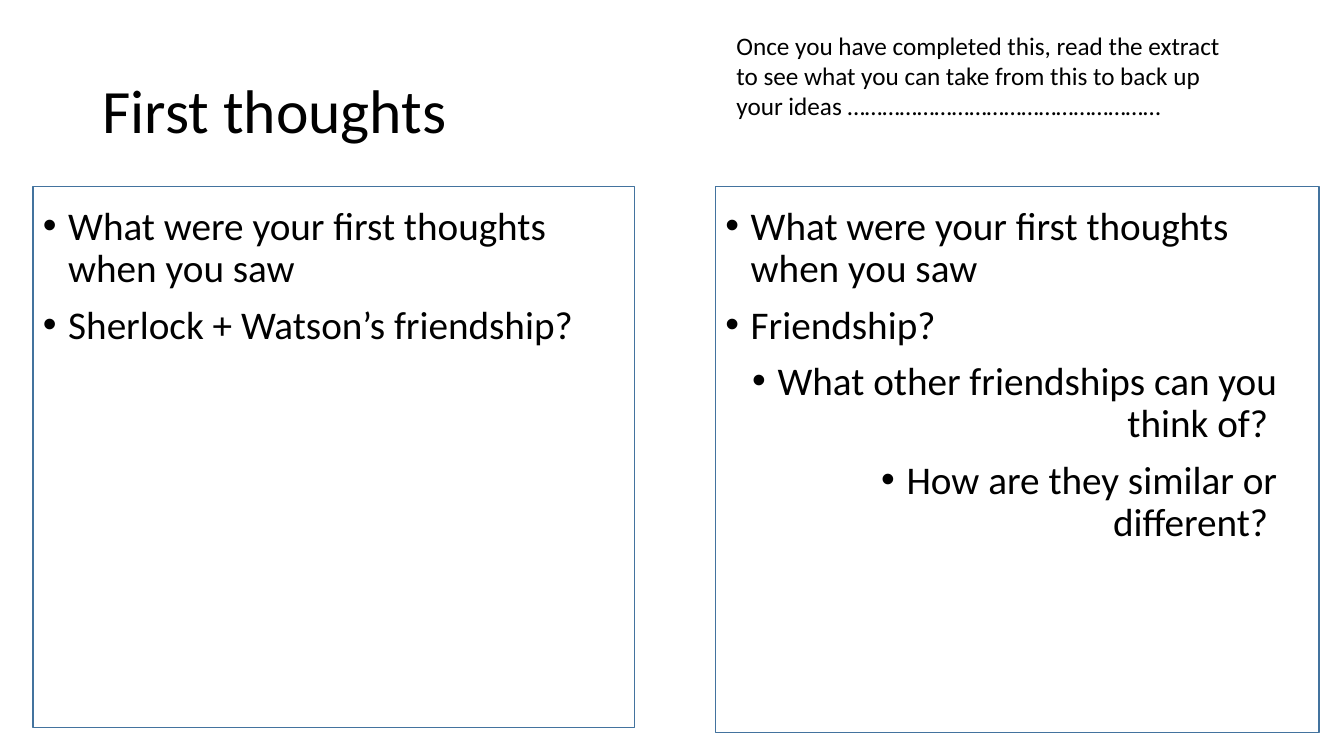
import pptx
import pptx.dml.color
import pptx.enum.shapes
import pptx.enum.text
import pptx.oxml.ns
import pptx.util

BLACK = pptx.dml.color.RGBColor(0x00, 0x00, 0x00)
FRAME_BLUE = pptx.dml.color.RGBColor(0x43, 0x73, 0x9E)
LEFT = pptx.enum.text.PP_ALIGN.LEFT
RIGHT = pptx.enum.text.PP_ALIGN.RIGHT
TOP = pptx.enum.text.MSO_ANCHOR.TOP
MIDDLE = pptx.enum.text.MSO_ANCHOR.MIDDLE

FIRST_QUESTION = "What were your first thoughts when you saw"
SHERLOCK_QUESTIONS = [
    (FIRST_QUESTION, LEFT),
    ("Sherlock + Watson’s friendship?", LEFT),
]
FRIENDSHIP_QUESTIONS = [
    (FIRST_QUESTION, LEFT),
    ("Friendship?", LEFT),
    ("What other friendships can you think of? ", RIGHT),
    ("How are they similar or different? ", RIGHT),
]
INSTRUCTION = (
    "Once you have completed this, read the extract to see what you can take "
    "from this to back up your ideas " + "…" * 18
)


def add_bullet(paragraph):
    properties = paragraph._p.get_or_add_pPr()
    indent = pptx.util.Cm(0.64)
    properties.set("marL", str(indent))
    properties.set("indent", str(-indent))
    for tag, name, value in (("a:buFont", "typeface", "Arial"), ("a:buChar", "char", "•")):
        properties.append(
            properties.makeelement(pptx.oxml.ns.qn(tag), {name: value})
        )


def write(paragraph, text, size, align=LEFT, line_spacing=1.0, space_before=0, bullet=False):
    paragraph.alignment = align
    paragraph.line_spacing = line_spacing
    paragraph.space_before = pptx.util.Pt(space_before)
    if bullet:
        add_bullet(paragraph)
    run = paragraph.add_run()
    run.text = text
    run.font.name = "Calibri"
    run.font.size = pptx.util.Pt(size)
    run.font.color.rgb = BLACK


def prepare_frame(holder, anchor=TOP):
    frame = holder.text_frame
    frame.word_wrap = True
    frame.auto_size = pptx.enum.text.MSO_AUTO_SIZE.NONE
    frame.vertical_anchor = anchor
    return frame


def place_title(slide, left, top, width, height):
    title = slide.shapes.title
    title.left, title.top, title.width, title.height = left, top, width, height
    frame = prepare_frame(title, MIDDLE)
    write(frame.paragraphs[0], "First thoughts", 44, line_spacing=0.9)


def add_instruction(slide, left, top, width, height):
    instruction = slide.shapes.add_textbox(left, top, width, height)
    write(prepare_frame(instruction).paragraphs[0], INSTRUCTION, 18)


def add_question_panel(slide, questions, left, top, width, height):
    """Draw a framed panel with its bulleted questions inset from the top."""
    border = slide.shapes.add_shape(
        pptx.enum.shapes.MSO_SHAPE.RECTANGLE, left, top, width, height
    )
    border.shadow.inherit = False
    border.fill.background()
    border.line.color.rgb = FRAME_BLUE
    border.line.width = pptx.util.Pt(1)

    question_list = slide.shapes.add_textbox(
        left, top + pptx.util.Cm(0.38), pptx.util.Cm(14.4), pptx.util.Cm(12.09)
    )
    frame = prepare_frame(question_list)
    for index, (question, align) in enumerate(questions):
        paragraph = frame.add_paragraph() if index else frame.paragraphs[0]
        write(paragraph, question, 28, align=align, line_spacing=0.9,
              space_before=10, bullet=True)


def box(*lengths):
    """Turn left, top, width and height in centimetres into lengths."""
    return [pptx.util.Cm(length) for length in lengths]


def main():
    presentation = pptx.Presentation()
    presentation.slide_width = pptx.util.Cm(33.87)
    presentation.slide_height = pptx.util.Cm(19.05)
    slide = presentation.slides.add_slide(presentation.slide_layouts[5])

    place_title(slide, *box(2.33, 1.01, 29.21, 3.68))
    add_question_panel(slide, SHERLOCK_QUESTIONS, *box(0.83, 4.7, 15.16, 13.64))
    add_question_panel(slide, FRIENDSHIP_QUESTIONS, *box(18.03, 4.7, 15.21, 13.76))
    add_instruction(slide, *box(18.31, 0.64, 13.23, 2.56))

    presentation.save("out.pptx")


if __name__ == "__main__":
    main()
